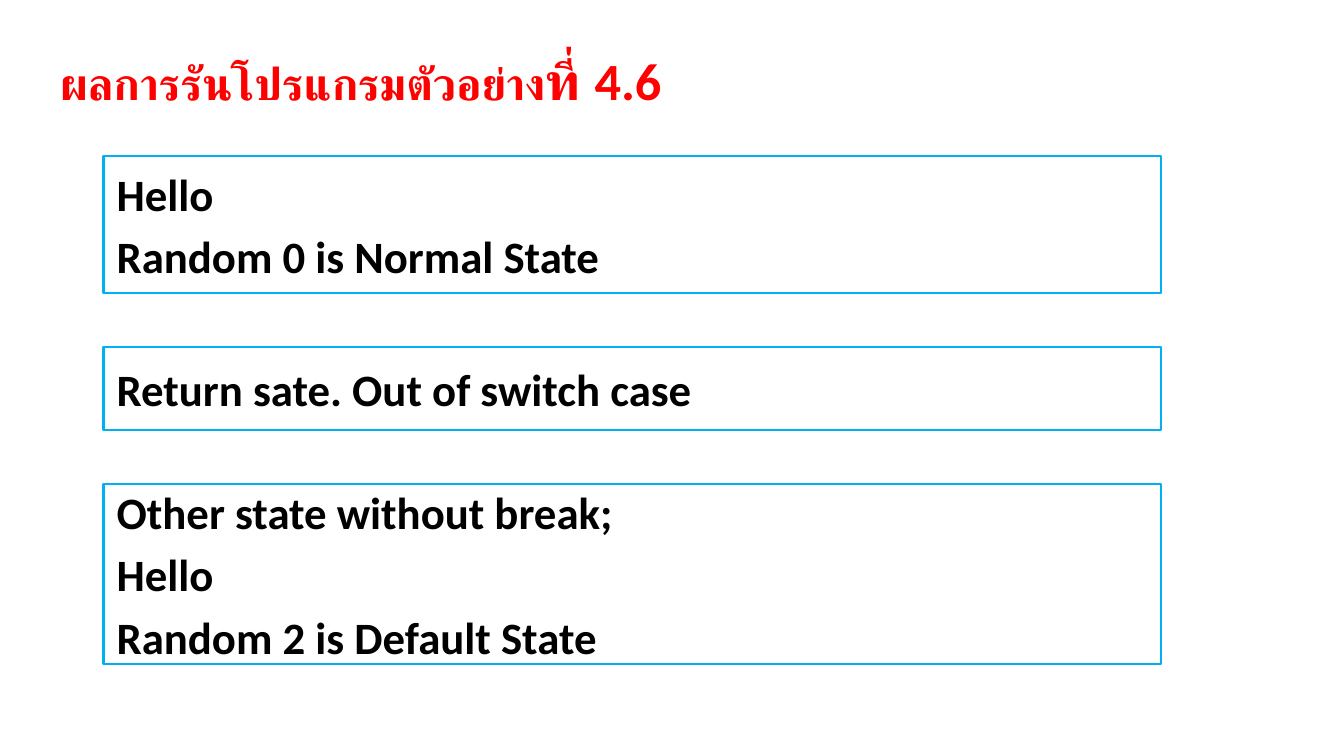
from pptx import Presentation
from pptx.dml.color import RGBColor
from pptx.enum.shapes import MSO_SHAPE
from pptx.enum.text import MSO_ANCHOR, PP_ALIGN
from pptx.util import Inches, Pt

RED = RGBColor(0xFF, 0x00, 0x00)
BLACK = RGBColor(0x00, 0x00, 0x00)
SKY = RGBColor(0x00, 0xB0, 0xF0)
FONT = "Calibri"

HEADING = [("ผลการรันโปรแกรมตัวอย่าง", 24), ("ที่ 4.6", 28)]
# Height of each output box and the lines it shows
OUTPUTS = [
    (1.02, ["Hello", "Random 0 is Normal State"]),
    (0.62, ["Return sate. Out of switch case"]),
    (1.34, ["Other state without break;", "Hello", "Random 2 is Default State"]),
]
BOX_LEFT, BOX_TOP, BOX_WIDTH, BOX_GAP = 0.77, 1.16, 7.87, 0.4


def add_run(paragraph, text, size, color):
    run = paragraph.add_run()
    run.text = text
    run.font.name = FONT
    run.font.size = Pt(size)
    run.font.bold = True
    run.font.color.rgb = color


def add_output(slide, top, height, lines):
    box = slide.shapes.add_shape(
        MSO_SHAPE.RECTANGLE, Inches(BOX_LEFT), Inches(top),
        Inches(BOX_WIDTH), Inches(height))
    box.shadow.inherit = False
    box.fill.background()
    box.line.color.rgb = SKY
    box.line.width = Pt(1.25)
    frame = box.text_frame
    frame.word_wrap = True
    frame.vertical_anchor = MSO_ANCHOR.MIDDLE
    for index, line in enumerate(lines):
        paragraph = frame.add_paragraph() if index else frame.paragraphs[0]
        paragraph.alignment = PP_ALIGN.LEFT
        if index:
            paragraph.space_before = Pt(4.8)
        add_run(paragraph, line, 24, BLACK)


prs = Presentation()
prs.slide_width = Inches(10)
prs.slide_height = prs.slide_width * 9 // 16
slide = prs.slides.add_slide(prs.slide_layouts[6])

heading = slide.shapes.add_textbox(
    Inches(0.35), Inches(0.29), Inches(8.27), Inches(0.6)).text_frame
heading.word_wrap = True
heading.vertical_anchor = MSO_ANCHOR.MIDDLE
for text, size in HEADING:
    add_run(heading.paragraphs[0], text, size, RED)

top = BOX_TOP
for height, lines in OUTPUTS:
    add_output(slide, top, height, lines)
    top += height + BOX_GAP

prs.save("out.pptx")
